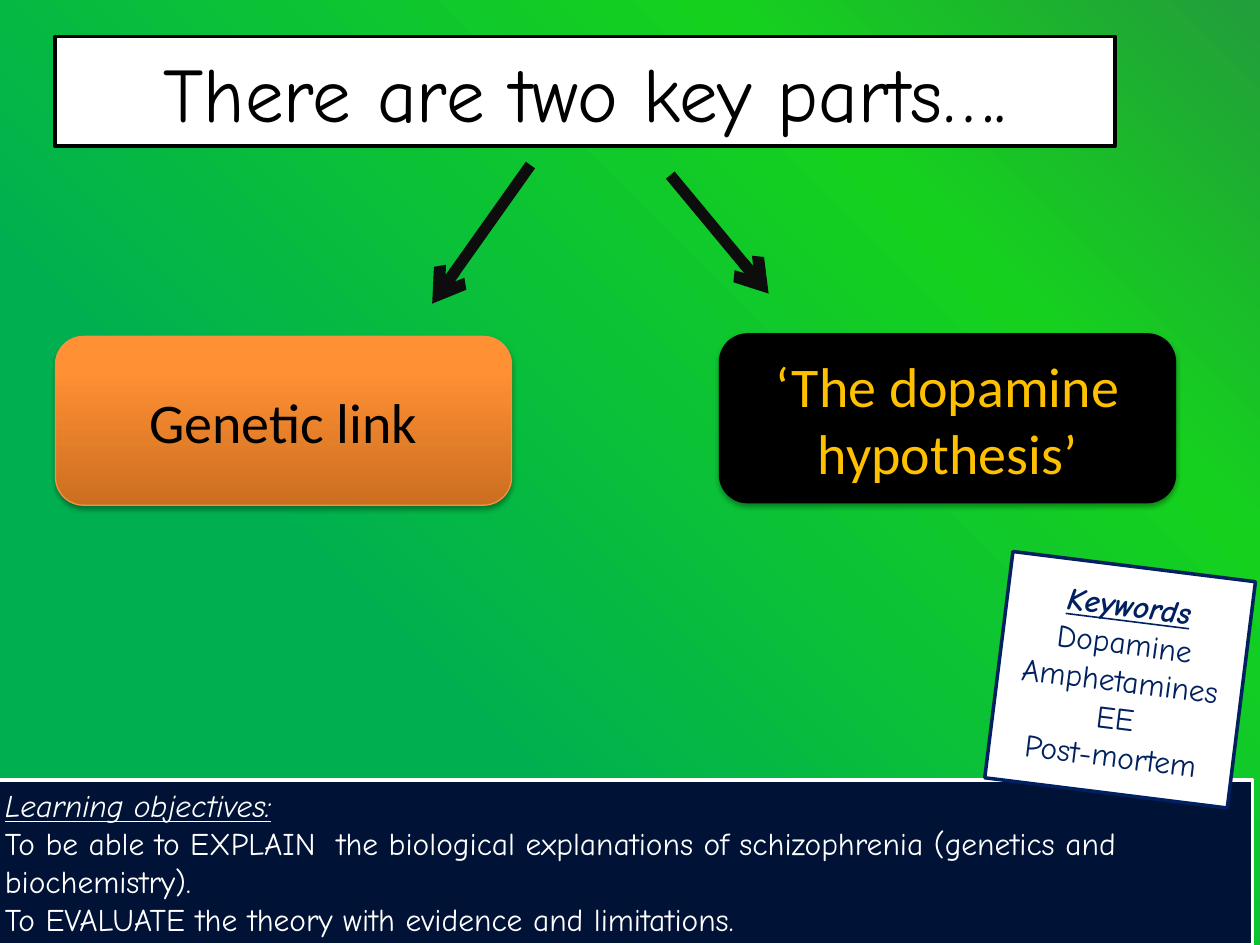
from lxml import etree
from pptx import Presentation
from pptx.dml.color import RGBColor
from pptx.enum.shapes import MSO_CONNECTOR, MSO_SHAPE
from pptx.enum.text import MSO_ANCHOR, MSO_AUTO_SIZE, PP_ALIGN
from pptx.oxml.ns import qn
from pptx.util import Emu, Pt

RECT, ROUNDED = MSO_SHAPE.RECTANGLE, MSO_SHAPE.ROUNDED_RECTANGLE
STRAIGHT = MSO_CONNECTOR.STRAIGHT
TOP, MIDDLE = MSO_ANCHOR.TOP, MSO_ANCHOR.MIDDLE
LEFT, CENTER = PP_ALIGN.LEFT, PP_ALIGN.CENTER
GROW = MSO_AUTO_SIZE.SHAPE_TO_FIT_TEXT

SCALE = 9144  # EMU per px, 100 px to the inch
COLORS = {
    "black": "000000", "white": "FFFFFF", "gold": "FFC000",
    "navy": "002060", "midnight": "001236", "ink": "0D0D0D",
    "orange_line": "F69240",
}
PAGE_GRADIENT = [(0, "00B050"), (31, "00B050"), (75, "15D11E"), (100, "229E3A")]
ORANGE_GRADIENT = [(0, "CC6E20"), (80, "FF9034"), (100, "FF9136")]


def px(length):
    return Emu(length * SCALE)


def color(name):
    return RGBColor.from_string(COLORS[name])


def add_xml(parent, tag, **attributes):
    return etree.SubElement(parent, qn(tag), attributes)


def set_gradient(fill, owner, stops, angle):
    """Give fill any number of stops; owner is the XML element that holds it."""
    fill.gradient()
    gradient = next(owner.iter(qn("a:gradFill")))
    for child in list(gradient):
        gradient.remove(child)
    stop_list = add_xml(gradient, "a:gsLst")
    for position, value in stops:
        stop = add_xml(stop_list, "a:gs", pos=str(position * 1000))
        add_xml(stop, "a:srgbClr", val=value)
    add_xml(gradient, "a:lin", ang=str(angle * 60000), scaled="0")


class SlideBuilder:
    heading_font = "Comic Neue"
    card_font = "Calibri"

    def __init__(self, page):
        self.page = page

    def background(self, stops, angle):
        set_gradient(self.page.background.fill, self.page._element, stops, angle)

    def box(self, kind, place, fill, line, width):
        box = self.page.shapes.add_shape(kind, *map(px, place))
        box.shadow.inherit = False
        if isinstance(fill, list):
            set_gradient(box.fill, box._element, fill, 270)
        else:
            box.fill.solid()
            box.fill.fore_color.rgb = color(fill)
        box.line.color.rgb = color(line)
        box.line.width = Pt(width)
        return box

    def text(self, box, lines, font, size, ink, align=CENTER, anchor=MIDDLE):
        """Write one paragraph per line; a line is (wording, styles such as 'bi')."""
        frame = box.text_frame
        frame.word_wrap = True
        frame.vertical_anchor = anchor
        for index, (wording, styles) in enumerate(lines):
            para = frame.add_paragraph() if index else frame.paragraphs[0]
            para.alignment = align
            span = para.add_run()
            span.text = wording
            span.font.name = font
            span.font.size = Pt(size)
            span.font.color.rgb = color(ink)
            span.font.bold = "b" in styles
            span.font.italic = "i" in styles
            span.font.underline = "u" in styles

    def title(self, place, wording):
        box = self.box(RECT, place, "white", "black", 2.25)
        self.text(box, [(wording, "")], self.heading_font, 44, "black")

    def card(self, left, top, wording, fill, line, ink):
        box = self.box(ROUNDED, (left, top, 362, 134), fill, line, 0.75)
        self.text(box, [(wording, "")], self.card_font, 32, ink)
        effects = box._element.spPr.find(qn("a:effectLst"))
        shadow = add_xml(effects, "a:outerShdw", blurRad="40000", dist="23000",
                         dir="5400000", rotWithShape="0")
        shade = add_xml(shadow, "a:srgbClr", val=COLORS["black"])
        add_xml(shade, "a:alpha", val="35000")

    def objectives(self, place, lines):
        box = self.box(RECT, place, "midnight", "white", 2)
        self.text(box, lines, self.heading_font, 18, "white", LEFT, TOP)
        box.text_frame.auto_size = GROW

    def note(self, place, lines, rotation):
        box = self.box(RECT, place, "white", "navy", 2)
        box.rotation = rotation
        self.text(box, lines, self.heading_font, 18, "navy")

    def arrow(self, start, end):
        arrow = self.page.shapes.add_connector(STRAIGHT, *map(px, start + end))
        arrow.line.color.rgb = color("ink")
        arrow.line.width = Pt(6.5)
        properties = arrow._element.spPr
        add_xml(properties.find(qn("a:ln")), "a:tailEnd", type="arrow")
        add_xml(properties, "a:effectLst")


def main():
    deck = Presentation()
    deck.slide_width, deck.slide_height = px(1000), px(750)
    slide = SlideBuilder(deck.slides.add_slide(deck.slide_layouts[6]))

    slide.background(PAGE_GRADIENT, 315)
    slide.card(44, 267, "Genetic link", ORANGE_GRADIENT, "orange_line", "black")
    slide.card(571, 265, "‘The dopamine hypothesis’", "black", "black", "gold")
    slide.title((44, 29, 841, 87), "There are two key parts….")
    slide.objectives((-6, 619, 1000, 131), [
        ("Learning objectives:", "iu"),
        ("To be able to EXPLAIN  the biological explanations of schizophrenia "
         "(genetics and biochemistry).", ""),
        ("To EVALUATE the theory with evidence and limitations.", ""),
    ])
    keywords = ["Dopamine", "Amphetamines", "EE", "Post-mortem"]
    slide.note((792, 449, 194, 181),
               [("Keywords", "biu")] + [(word, "") for word in keywords], 7.1)
    slide.arrow((421, 131), (343, 241))
    slide.arrow((532, 139), (610, 233))

    deck.save("out.pptx")


if __name__ == "__main__":
    main()
